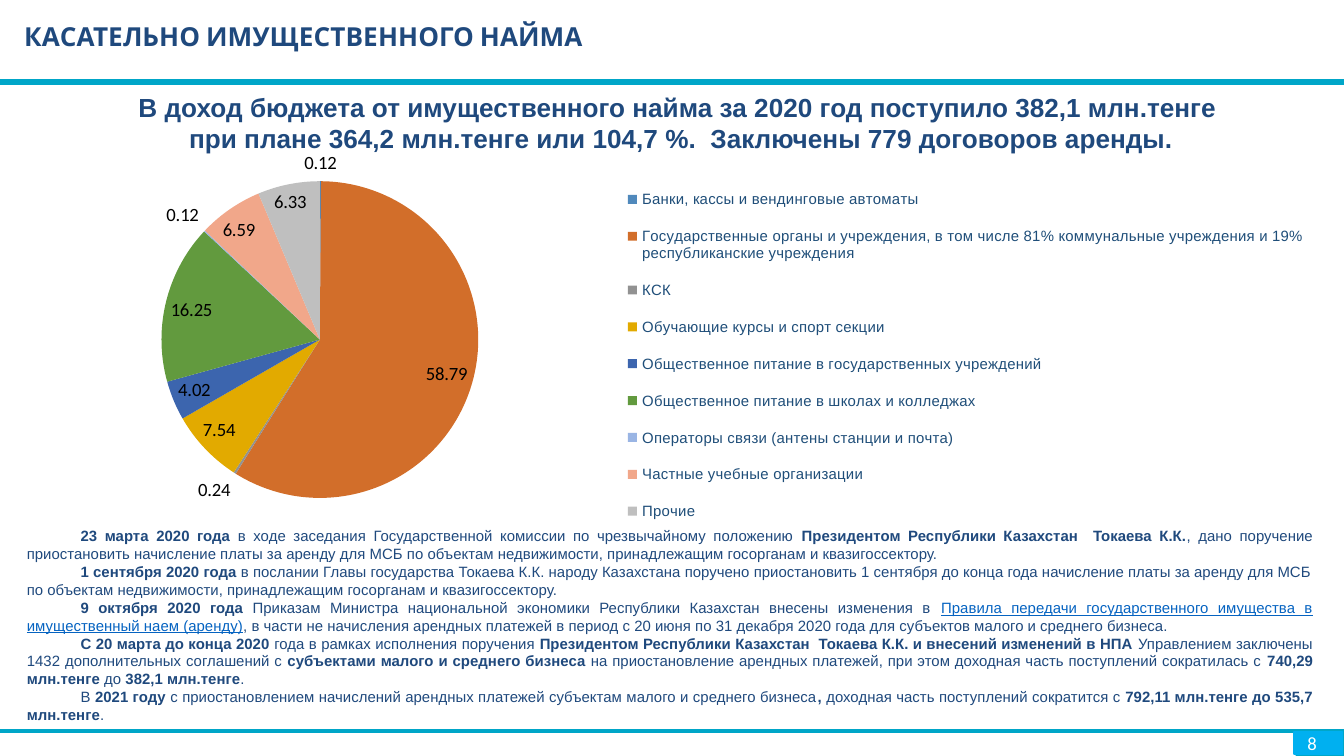
from lxml import etree
from pptx import Presentation
from pptx.chart.data import CategoryChartData
from pptx.dml.color import RGBColor
from pptx.enum.chart import XL_CHART_TYPE, XL_LABEL_POSITION, XL_LEGEND_POSITION
from pptx.enum.shapes import MSO_CONNECTOR, MSO_SHAPE
from pptx.enum.text import PP_ALIGN
from pptx.oxml import parse_xml
from pptx.oxml.ns import nsdecls, qn
from pptx.util import Inches, Pt

PIE = XL_CHART_TYPE.PIE
BEST_FIT = XL_LABEL_POSITION.BEST_FIT
RIGHT = XL_LEGEND_POSITION.RIGHT
STRAIGHT = MSO_CONNECTOR.STRAIGHT
RECT = MSO_SHAPE.RECTANGLE
LEFT, CENTER, JUSTIFY = PP_ALIGN.LEFT, PP_ALIGN.CENTER, PP_ALIGN.JUSTIFY

COLORS = {
    "navy": "1F497D", "teal": "00A6C8", "sky": "00B0F0", "link": "0563C1",
    "white": "FFFFFF", "black": "000000", "legend": "1F4E79",
}

# category, value, slice colour
RENT_SHARES = [
    ("Банки, кассы и вендинговые автоматы", 0.12, "5089BC"),
    ("Государственные органы и учреждения, в том числе 81% коммунальные "
     "учреждения и 19% республиканские учреждения", 58.79, "D26E2A"),
    ("КСК", 0.24, "929292"),
    ("Обучающие курсы и спорт секции", 7.54, "E2AA00"),
    ("Общественное питание в государственных учреждений", 4.02, "3C65AE"),
    ("Общественное питание в школах и колледжах", 16.25, "629A3E"),
    ("Операторы связи (антены станции и почта)", 0.12, "9AB5E4"),
    ("Частные учебные организации", 6.59, "F1A78A"),
    ("Прочие", 6.33, "BFBFBF"),
]

HEADING = [
    [("В доход бюджета от имущественного найма за 2020 год поступило 382,1 млн.тенге ", "b")],
    [("при плане 364,2 млн.тенге или 104,7 %.  Заключены 779 договоров аренды.", "b")],
]

# runs: text, style ("b" bold, "u" underlined link, "" plain)
DECISIONS = [
    [("23 марта 2020 года", "b"),
     (" в ходе заседания Государственной комиссии по чрезвычайному положению ", ""),
     ("Президентом Республики Казахстан  Токаева К.К.", "b"),
     (", дано поручение приостановить начисление платы за аренду для МСБ по объектам "
      "недвижимости, принадлежащим госорганам и квазигоссектору.", "")],
    [("1 сентября 2020 года", "b"),
     (" в послании Главы государства Токаева К.К. народу Казахстана поручено приостановить "
      "1 сентября до конца года начисление платы за аренду для МСБ по объектам недвижимости, "
      "принадлежащим госорганам и квазигоссектору. ", "")],
    [("9 октября 2020 года", "b"),
     (" Приказам Министра национальной экономики Республики Казахстан внесены изменения в ", ""),
     ("Правила передачи государственного имущества в имущественный наем (аренду)", "u"),
     (", в части не начисления арендных платежей в период с 20 июня по 31 декабря 2020 года "
      "для субъектов малого и среднего бизнеса.", "")],
    [("С 20 марта до конца 2020 ", "b"),
     ("года в рамках исполнения поручения ", ""),
     ("Президентом Республики Казахстан  Токаева К.К. и внесений изменений в НПА ", "b"),
     ("Управлением заключены 1432 дополнительных соглашений с ", ""),
     ("субъектами малого и среднего бизнеса", "b"),
     (" на приостановление арендных платежей, при этом доходная часть поступлений "
      "сократилась с ", ""),
     ("740,29 млн.тенге ", "b"), ("до", ""), (" 382,1 млн.тенге", "b"), (". ", "")],
    [("В ", ""), ("2021 году ", "b"),
     ("с приостановлением начислений арендных платежей субъектам малого и среднего бизнеса", ""),
     (", ", "b"), ("доходная часть поступлений сократится с ", ""),
     ("792,11 млн.тенге до 535,7 млн.тенге", "b"), (".", "")],
]


def rgb(name):
    return RGBColor.from_string(COLORS.get(name, name))


def set_font(font, color, **values):
    for key, value in values.items():
        setattr(font, key, value)
    font.color.rgb = rgb(color)


def manual_layout(x, y, w, h, inner=False):
    """Chart layout element; the four values are fractions of the chart."""
    target = '<c:layoutTarget val="inner"/>' if inner else ""
    sizes = "".join(f'<c:{k} val="{v}"/>' for k, v in zip("xywh", (x, y, w, h)))
    return parse_xml(
        f'<c:layout {nsdecls("c")}><c:manualLayout>{target}<c:xMode val="edge"/>'
        f'<c:yMode val="edge"/>{sizes}</c:manualLayout></c:layout>')


class SlideBuilder:
    def __init__(self, slide):
        self.s = slide

    def rule(self, y, width):
        line = self.s.shapes.add_connector(STRAIGHT, 0, Inches(y), Inches(10), Inches(y))
        line.line.color.rgb = rgb("teal")
        line.line.width = Pt(width)
        etree.SubElement(line._element.spPr, qn("a:effectLst"))

    def rect(self, box, color, outlined=False):
        sp = self.s.shapes.add_shape(RECT, *map(Inches, box))
        sp.shadow.inherit = False
        sp.fill.solid()
        sp.fill.fore_color.rgb = rgb(color)
        if outlined:
            sp.line.color.rgb = rgb(color)
            sp.line.width = Pt(1)
        else:
            sp.line.fill.background()

    def text(self, box, paragraphs, size, font="Arial", color="navy", align=LEFT,
             insets=(0.05, 0.03), indent=0):
        tf = self.s.shapes.add_textbox(*map(Inches, box)).text_frame
        tf.word_wrap = True
        tf.margin_left = tf.margin_right = Inches(insets[0])
        tf.margin_top = tf.margin_bottom = Inches(insets[1])
        for i, runs in enumerate(paragraphs):
            p = tf.add_paragraph() if i else tf.paragraphs[0]
            p.alignment = align
            if indent:
                p._p.get_or_add_pPr().set("indent", str(Inches(indent)))
            for words, style in runs:
                r = p.add_run()
                r.text = words
                set_font(r.font, "link" if style == "u" else color, name=font,
                         size=Pt(size), bold=style == "b", underline=style == "u")

    def pie(self, box, rows):
        data = CategoryChartData()
        data.categories = [name for name, _, _ in rows]
        data.add_series("Series 1", [value for _, value, _ in rows])
        chart = self.s.shapes.add_chart(PIE, *map(Inches, box), data).chart
        chart.has_title = False
        set_font(chart.font, "black", name="Calibri", size=Pt(10))

        plot = chart.plots[0]
        plot.vary_by_categories = True
        for i, (_, _, color) in enumerate(rows):
            fill = plot.series[0].points[i].format.fill
            fill.solid()
            fill.fore_color.rgb = rgb(color)
        plot.has_data_labels = True
        labels = plot.data_labels
        for key, value in {"show_value": True, "show_percentage": False,
                           "number_format": "#,##0.00", "number_format_is_linked": False,
                           "position": BEST_FIT}.items():
            setattr(labels, key, value)

        chart.has_legend = True
        legend = chart.legend
        legend.position = RIGHT
        legend.include_in_layout = False
        set_font(legend.font, "legend", name="Arial", size=Pt(8))

        area = chart._chartSpace.chart.plotArea
        for old in area.findall(qn("c:layout")):
            area.remove(old)
        area.insert(0, manual_layout(0.017, 0.191, 0.444, 0.644, inner=True))
        element = legend._element
        for old in element.findall(qn("c:layout")):
            element.remove(old)
        element.find(qn("c:legendPos")).addnext(manual_layout(0.46, 0.17, 0.52, 0.75))


def main():
    prs = Presentation()
    prs.slide_width = Inches(10)
    prs.slide_height = prs.slide_width * 9 // 16
    b = SlideBuilder(prs.slides.add_slide(prs.slide_layouts[6]))
    b.rule(0.61, 3)
    b.rule(5.44, 2)
    b.rect((9.64, 5.45, 0.36, 0.18), "teal")
    b.text((0.15, 0.12, 9.1, 0.35), [[("КАСАТЕЛЬНО ИМУЩЕСТВЕННОГО НАЙМА", "b")]], 14,
           font="Cabin", insets=(0.03, 0.03))
    b.text((0.31, 0.65, 9.52, 0.47), HEADING, 14, align=CENTER)
    b.text((0.15, 3.89, 9.67, 1.67), DECISIONS, 8, align=JUSTIFY, indent=0.4)
    b.pie((-0.01, 0.65, 10, 3.66), RENT_SHARES)
    b.rect((9.63, 5.45, 0.36, 0.16), "sky", outlined=True)
    b.text((9.63, 5.4, 0.36, 0.27), [[("8", "")]], 10, font="Calibri", color="white",
           insets=(0.1, 0.05))
    prs.save("out.pptx")


if __name__ == "__main__":
    main()
